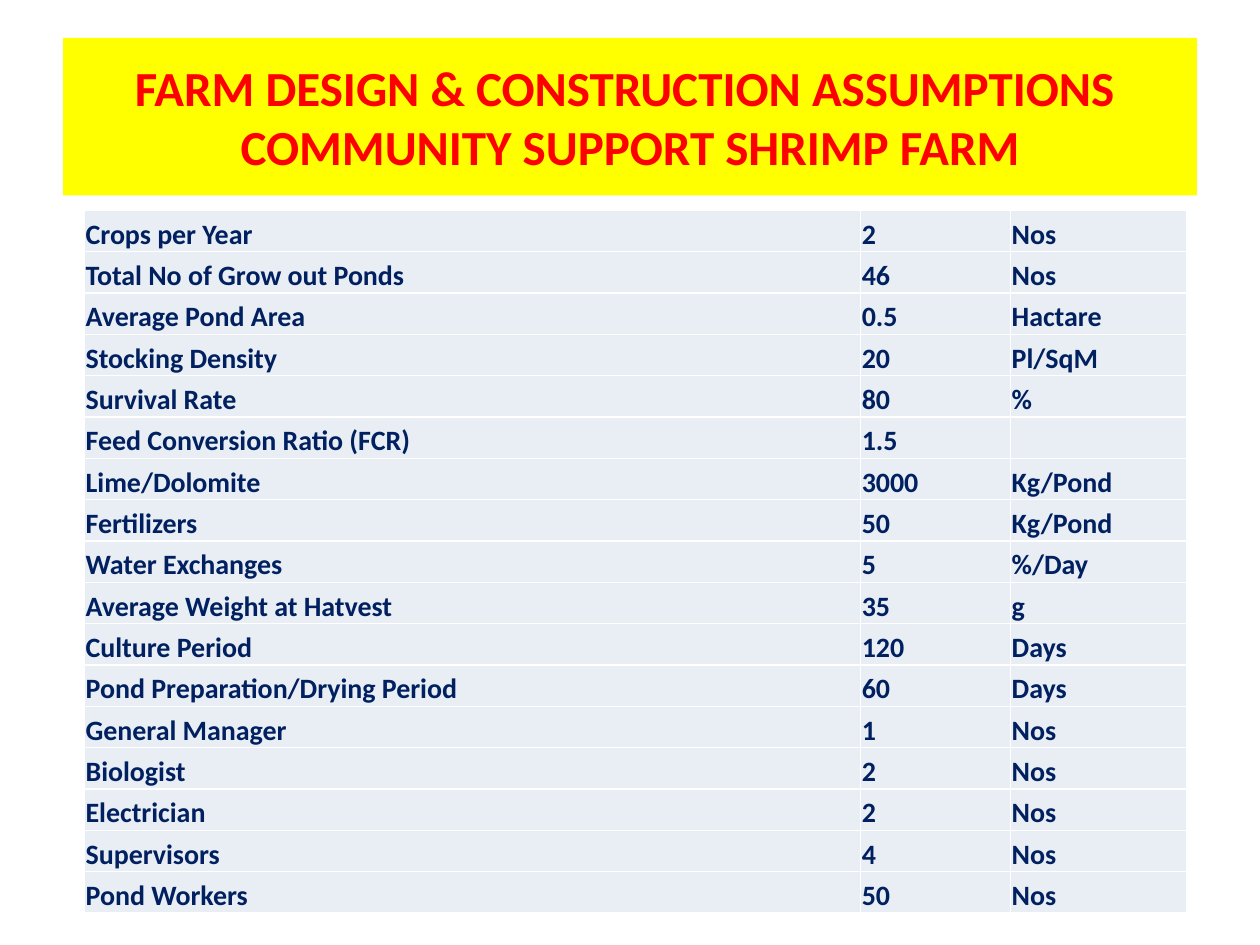
from typing import NamedTuple

from pptx import Presentation
from pptx.dml.color import RGBColor
from pptx.enum.text import MSO_ANCHOR, MSO_AUTO_SIZE, PP_ALIGN
from pptx.util import Inches, Pt

COLORS = {
    "banner": "FFFF00",
    "title": "FF0000",
    "cell": "E9EDF4",
    "text": "002060",
}
FONT = "Calibri"
COLUMN_WIDTHS = (6.16, 1.19, 1.4)
TABLE_HEIGHT = 5.58


class Assumption(NamedTuple):
    item: str
    value: str
    unit: str


ASSUMPTIONS = (
    Assumption("Crops per Year", "2", "Nos"),
    Assumption("Total No of Grow out Ponds", "46", "Nos"),
    Assumption("Average Pond Area", "0.5", "Hactare"),
    Assumption("Stocking Density", "20", "Pl/SqM"),
    Assumption("Survival Rate", "80", "%"),
    Assumption("Feed Conversion Ratio (FCR)", "1.5", ""),
    Assumption("Lime/Dolomite", "3000", "Kg/Pond"),
    Assumption("Fertilizers", "50", "Kg/Pond"),
    Assumption("Water Exchanges", "5", "%/Day"),
    Assumption("Average Weight at Hatvest", "35", "g"),
    Assumption("Culture Period", "120", "Days"),
    Assumption("Pond Preparation/Drying Period", "60", "Days"),
    Assumption("General Manager", "1", "Nos"),
    Assumption("Biologist", "2", "Nos"),
    Assumption("Electrician", "2", "Nos"),
    Assumption("Supervisors", "4", "Nos"),
    Assumption("Pond Workers", "50", "Nos"),
)


def set_fill(target, color: str) -> None:
    target.fill.solid()
    target.fill.fore_color.rgb = RGBColor.from_string(COLORS[color])


def set_font(para, size: int, color: str) -> None:
    font = para.font
    font.name = FONT
    font.size = Pt(size)
    font.bold = True
    font.color.rgb = RGBColor.from_string(COLORS[color])


def format_title(title) -> None:
    title.left, title.top = Inches(0.5), Inches(0.3)
    title.width, title.height = Inches(9), Inches(1.25)
    set_fill(title, "banner")
    frame = title.text_frame
    frame.text = "FARM DESIGN & CONSTRUCTION ASSUMPTIONS \vCOMMUNITY SUPPORT SHRIMP FARM"
    frame.auto_size = MSO_AUTO_SIZE.NONE
    frame.word_wrap = True
    frame.vertical_anchor = MSO_ANCHOR.MIDDLE
    para = frame.paragraphs[0]
    para.alignment = PP_ALIGN.CENTER
    set_font(para, 28, "title")


def fill_cell(cell, text: str) -> None:
    cell.text = text
    cell.vertical_anchor = MSO_ANCHOR.BOTTOM
    cell.margin_left = cell.margin_right = cell.margin_top = Inches(0.01)
    cell.margin_bottom = 0
    set_fill(cell, "cell")
    set_font(cell.text_frame.paragraphs[0], 16, "text")


def add_assumption_table(page) -> None:
    table = page.shapes.add_table(
        len(ASSUMPTIONS), len(COLUMN_WIDTHS),
        Inches(0.67), Inches(1.67), Inches(sum(COLUMN_WIDTHS)), Inches(TABLE_HEIGHT),
    ).table
    table.first_row = False
    table.horz_banding = False
    for column, width in zip(table.columns, COLUMN_WIDTHS):
        column.width = Inches(width)
    for row, assumption in zip(table.rows, ASSUMPTIONS):
        row.height = Inches(TABLE_HEIGHT / len(ASSUMPTIONS))
        for cell, text in zip(row.cells, assumption):
            fill_cell(cell, text)


def main() -> None:
    deck = Presentation()
    deck.slide_width, deck.slide_height = Inches(10), Inches(7.5)
    page = deck.slides.add_slide(deck.slide_layouts.get_by_name("Title Only"))
    format_title(page.shapes.title)
    add_assumption_table(page)
    deck.save("out.pptx")


if __name__ == "__main__":
    main()
